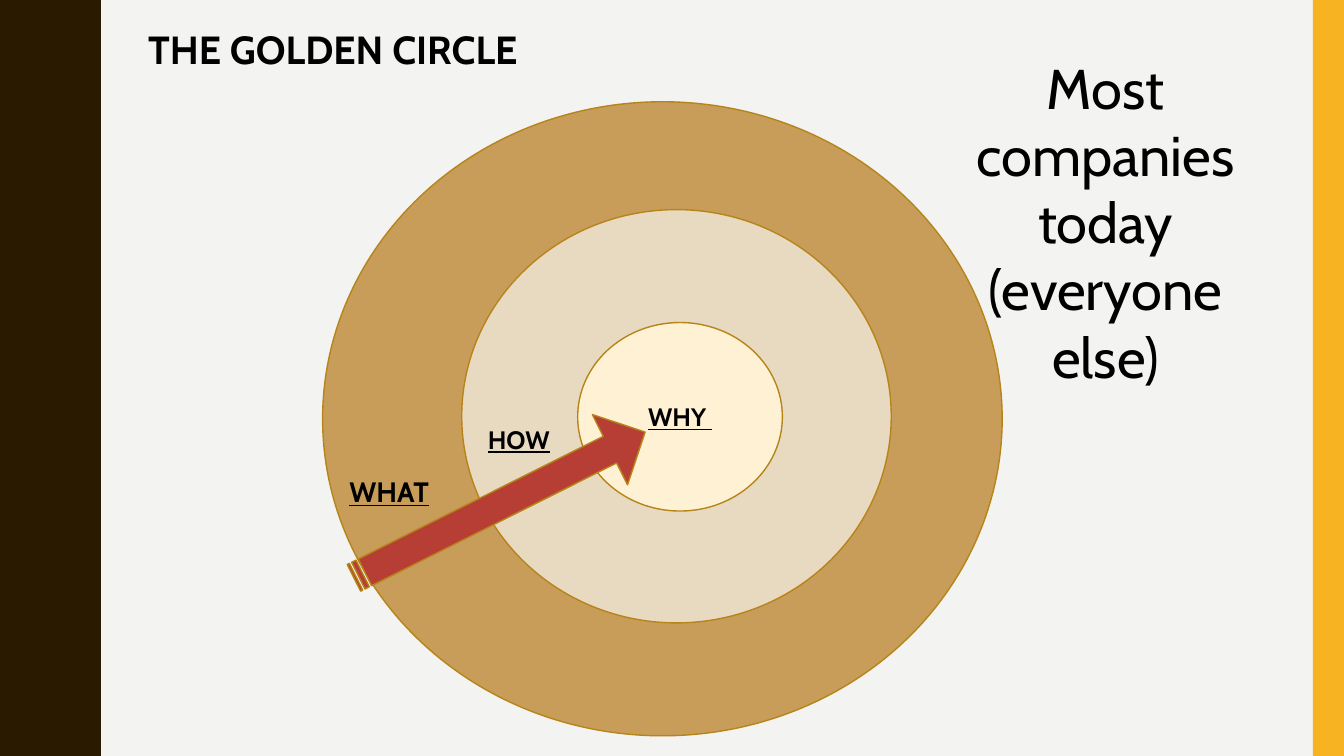
from dataclasses import dataclass

import pptx
import pptx.dml.color
import pptx.enum.shapes
import pptx.enum.text
import pptx.util

Inches = pptx.util.Inches
Shape = pptx.enum.shapes.MSO_SHAPE
Align = pptx.enum.text.PP_ALIGN
Anchor = pptx.enum.text.MSO_ANCHOR


@dataclass(frozen=True)
class Theme:
    font: str = "Cabin"
    background: str = "F3F3F2"
    wave: str = "2A1A00"
    stripe: str = "F8B323"
    outline: str = "B7841A"
    outer_ring: str = "C89D5A"
    middle_ring: str = "E8DAC0"
    core: str = "FFF1D4"
    arrow: str = "B73E35"
    text: str = "000000"
    label_size: int = 18
    large_label_size: int = 20
    title_size: int = 28
    statement_size: int = 40


def rgb(value):
    return pptx.dml.color.RGBColor.from_string(value)


class SlideBuilder:
    def __init__(self, deck, theme):
        self.theme = theme
        self.page = deck.slides.add_slide(deck.slide_layouts[5])
        fill = self.page.background.fill
        fill.solid()
        fill.fore_color.rgb = rgb(theme.background)

    def paint(self, shape, fill, line=None):
        shape.shadow.inherit = False
        shape.fill.solid()
        shape.fill.fore_color.rgb = rgb(fill)
        if line:
            shape.line.color.rgb = rgb(line)
            shape.line.width = pptx.util.Pt(1)
        else:
            shape.line.fill.background()

    def shape(self, kind, box, fill, line=None):
        shape = self.page.shapes.add_shape(kind, *map(Inches, box))
        self.paint(shape, fill, line)
        return shape

    def outline(self, points, fill):
        """Add a closed freeform through points given in inches."""
        builder = self.page.shapes.build_freeform(*points[0], scale=Inches(1))
        builder.add_line_segments(points[1:], close=True)
        self.paint(builder.convert_to_shape(), fill)

    def set_text(self, shape, text, size, bold=False, underline=False,
                 align=Align.CENTER, anchor=Anchor.TOP):
        frame = shape.text_frame
        frame.text = text
        frame.word_wrap = True
        frame.auto_size = pptx.enum.text.MSO_AUTO_SIZE.NONE
        frame.vertical_anchor = anchor
        para = frame.paragraphs[0]
        para.alignment = align
        font = para.font
        font.name = self.theme.font
        font.size = pptx.util.Pt(size)
        font.bold = bold
        font.underline = underline
        font.color.rgb = rgb(self.theme.text)

    def text(self, box, text, size, **style):
        text_box = self.page.shapes.add_textbox(*map(Inches, box))
        self.set_text(text_box, text, size, **style)

    def title(self, box, text):
        title = self.page.shapes.title
        title.left, title.top, title.width, title.height = map(Inches, box)
        self.set_text(title, text, self.theme.title_size, bold=True, align=Align.LEFT)


def wave_points(height, period=1.5):
    """Trace the left band, whose right edge repeats one mirrored half wave."""
    rise = [(0.78, 0), (0.78, 0.07), (0.79, 0.14), (0.8, 0.2), (0.81, 0.25),
            (0.83, 0.29), (0.85, 0.33), (0.89, 0.42), (0.91, 0.46), (0.93, 0.5),
            (0.95, 0.55), (0.96, 0.61), (0.97, 0.68), (0.97, 0.75)]
    fall = [(x, period - y) for x, y in reversed(rise[1:-1])]
    edge = [(x, y + wave * period)
            for wave in range(round(height / period)) for x, y in rise + fall]
    return [(0, 0), *edge, (rise[0][0], height), (0, height)]


def main():
    deck = pptx.Presentation()
    deck.slide_width, deck.slide_height = Inches(13.33), Inches(7.5)
    theme = Theme()
    slide = SlideBuilder(deck, theme)

    slide.outline(wave_points(7.5), theme.wave)
    slide.shape(Shape.RECTANGLE, (13.02, 0, 0.31, 7.5), theme.stripe)
    slide.title((1.37, 0.2, 5.53, 0.57), "THE GOLDEN CIRCLE")

    rings = [((3.2, 1.01, 6.74, 6.29), theme.outer_ring),
             ((4.58, 2.08, 4.26, 4.1), theme.middle_ring),
             ((5.73, 3.2, 2.03, 1.87), theme.core)]
    for box, fill in rings:
        core = slide.shape(Shape.OVAL, box, fill, theme.outline)
    label = {"bold": True, "underline": True}
    slide.set_text(core, "WHY ", theme.label_size, anchor=Anchor.MIDDLE, **label)
    slide.text((4.16, 4.16, 1.97, 0.4), "HOW", theme.label_size, **label)
    slide.text((2.76, 4.66, 2.2, 0.44), "WHAT", theme.large_label_size, **label)

    arrow = slide.shape(Shape.STRIPED_RIGHT_ARROW, (3.34, 4.62, 3.23, 0.78),
                        theme.arrow, theme.outline)
    arrow.rotation = 333.4
    arrow.adjustments[0] = 0.38
    arrow.adjustments[1] = 0.5

    slide.text((9.26, 0.48, 3.41, 3.47), "Most companies today (everyone else)",
               theme.statement_size)
    deck.save("out.pptx")


if __name__ == "__main__":
    main()
